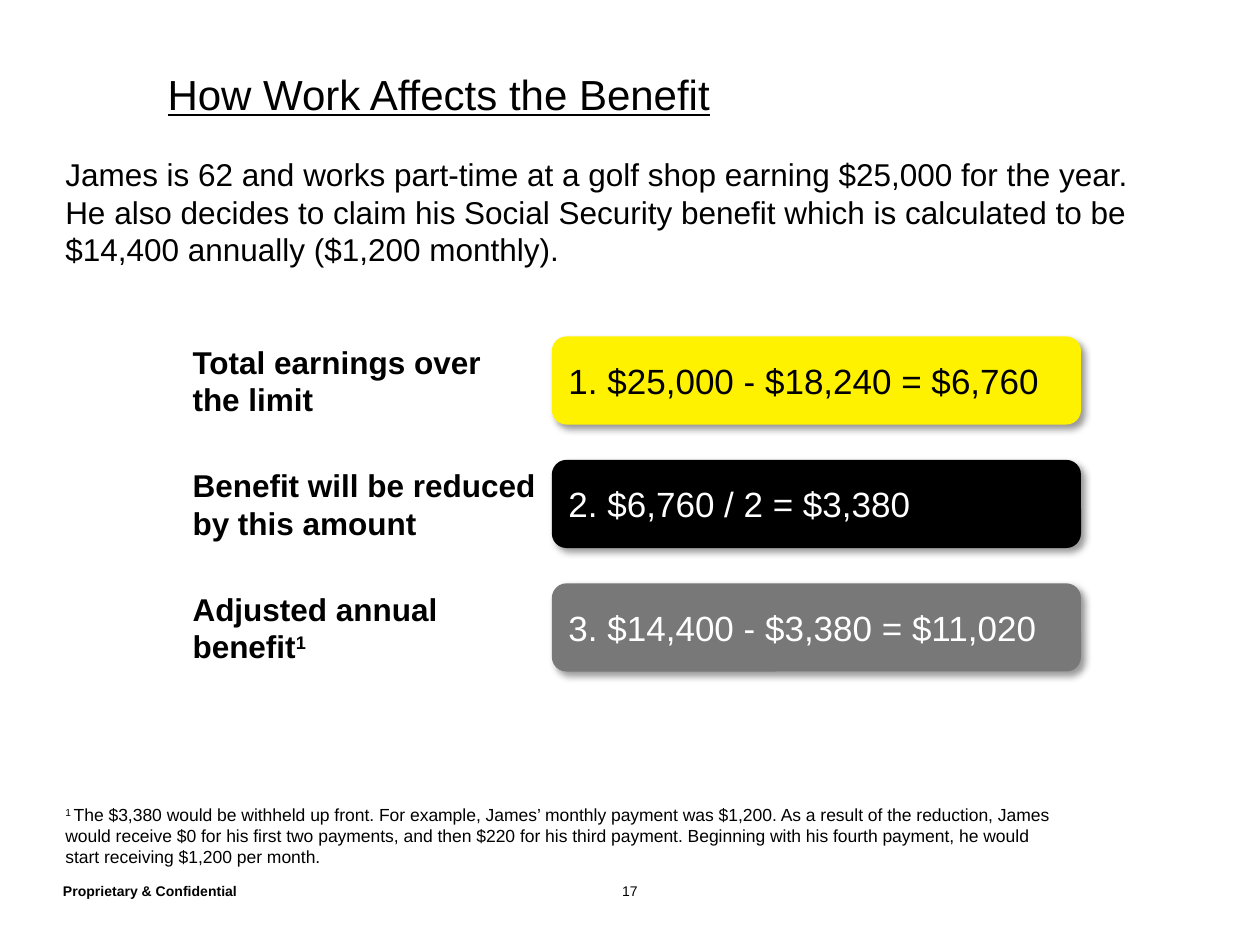
from pptx import Presentation
from pptx.dml.color import RGBColor
from pptx.enum.shapes import MSO_SHAPE as SHAPE
from pptx.enum.text import MSO_ANCHOR as ANCHOR, PP_ALIGN as ALIGN
from pptx.oxml import parse_xml
from pptx.oxml.ns import nsdecls, qn
from pptx.util import Inches, Pt

BLACK, WHITE, YELLOW, GRAY = "000000", "FFFFFF", "FFF200", "777877"
STEPS = [
    ("Total earnings over\nthe limit", "1. $25,000 - $18,240 = $6,760", YELLOW, BLACK),
    ("Benefit will be reduced\nby this amount", "2. $6,760 / 2 = $3,380", BLACK, WHITE),
    ("Adjusted annual\nbenefit^1^", "3. $14,400 - $3,380 = $11,020", GRAY, WHITE),
]
INTRO = ("James is 62 and works part-time at a golf shop earning $25,000 for the year. "
         "He also decides to claim his Social Security benefit which is calculated "
         "to be $14,400 annually ($1,200 monthly).")
FOOTNOTE = ("^1 ^The $3,380 would be withheld up front. For example, James’ monthly payment "
            "was $1,200. As a result of the reduction, James would receive $0 for his first "
            "two payments, and then $220 for his third payment. Beginning with his fourth "
            "payment, he would start receiving $1,200 per month.")


def rgb(color):
    return RGBColor.from_string(color)


class SlideBuilder:
    font = "Arial"

    def __init__(self, slide):
        self.s = slide

    def add_lines(self, tf, text, size, color=BLACK, bold=False, underline=False):
        """Fill a frame, one paragraph per line; text between carets is superscript."""
        for i, line in enumerate(text.split("\n")):
            p = tf.add_paragraph() if i else tf.paragraphs[0]
            p.alignment = ALIGN.LEFT
            for j, part in enumerate(line.split("^")):
                if not part:
                    continue
                r = p.add_run()
                r.text = part
                r.font.name, r.font.size = self.font, Pt(size)
                r.font.bold, r.font.underline = bold, underline
                r.font.color.rgb = rgb(color)
                if j % 2:
                    r.font._element.set("baseline", "30000")

    def text(self, x, y, w, h, text, size, wrap=True, inset=True,
             anchor=ANCHOR.TOP, **style):
        tf = self.s.shapes.add_textbox(Inches(x), Inches(y), Inches(w), Inches(h)).text_frame
        tf.word_wrap, tf.vertical_anchor = wrap, anchor
        if not inset:
            tf.margin_left = tf.margin_right = tf.margin_top = tf.margin_bottom = 0
        self.add_lines(tf, text, size, **style)
        return tf

    def card(self, x, y, w, h, text, fill, color):
        sp = self.s.shapes.add_shape(SHAPE.ROUNDED_RECTANGLE, Inches(x), Inches(y),
                                     Inches(w), Inches(h))
        sp.fill.solid()
        sp.fill.fore_color.rgb = rgb(fill)
        sp.line.fill.background()
        sp.shadow.inherit = False
        sp._element.spPr.find(qn("a:effectLst")).append(parse_xml(
            f'<a:outerShdw {nsdecls("a")} blurRad="{Pt(4)}" dist="{Pt(3)}" dir="2700000" '
            f'algn="tl" rotWithShape="0"><a:srgbClr val="{BLACK}"><a:alpha val="40000"/>'
            '</a:srgbClr></a:outerShdw>'))
        tf = sp.text_frame
        tf.word_wrap, tf.vertical_anchor = True, ANCHOR.MIDDLE
        self.add_lines(tf, text, 20, color)


def main():
    prs = Presentation()
    prs.slide_width, prs.slide_height = Inches(10), Inches(7.5)
    b = SlideBuilder(prs.slides.add_slide(prs.slide_layouts[6]))

    title = b.text(1.33, 0.5, 9, 0.99, "How Work Affects the Benefit", 24,
                   inset=False, underline=True)
    title.paragraphs[0].line_spacing = Pt(32)
    b.text(0.42, 1.18, 9, 1.01, INTRO, 18)

    for i, (label, formula, fill, color) in enumerate(STEPS):
        y = 2.67 + i * 0.98
        b.card(4.38, y, 4.2, 0.7, formula, fill, color)
        b.text(1.43, y, 2.95, 0.71, label, 18, wrap=False, bold=True)

    b.text(0.42, 6.33, 8.08, 0.61, FOOTNOTE, 10)
    b.text(0.5, 7.01, 4, 0.13, "Proprietary & Confidential", 8, inset=False,
           anchor=ANCHOR.BOTTOM, bold=True)
    number = b.text(4.74, 7.01, 0.52, 0.13, "17", 8, inset=False, anchor=ANCHOR.BOTTOM)
    number.paragraphs[0].alignment = ALIGN.CENTER

    prs.save("out.pptx")


if __name__ == "__main__":
    main()
